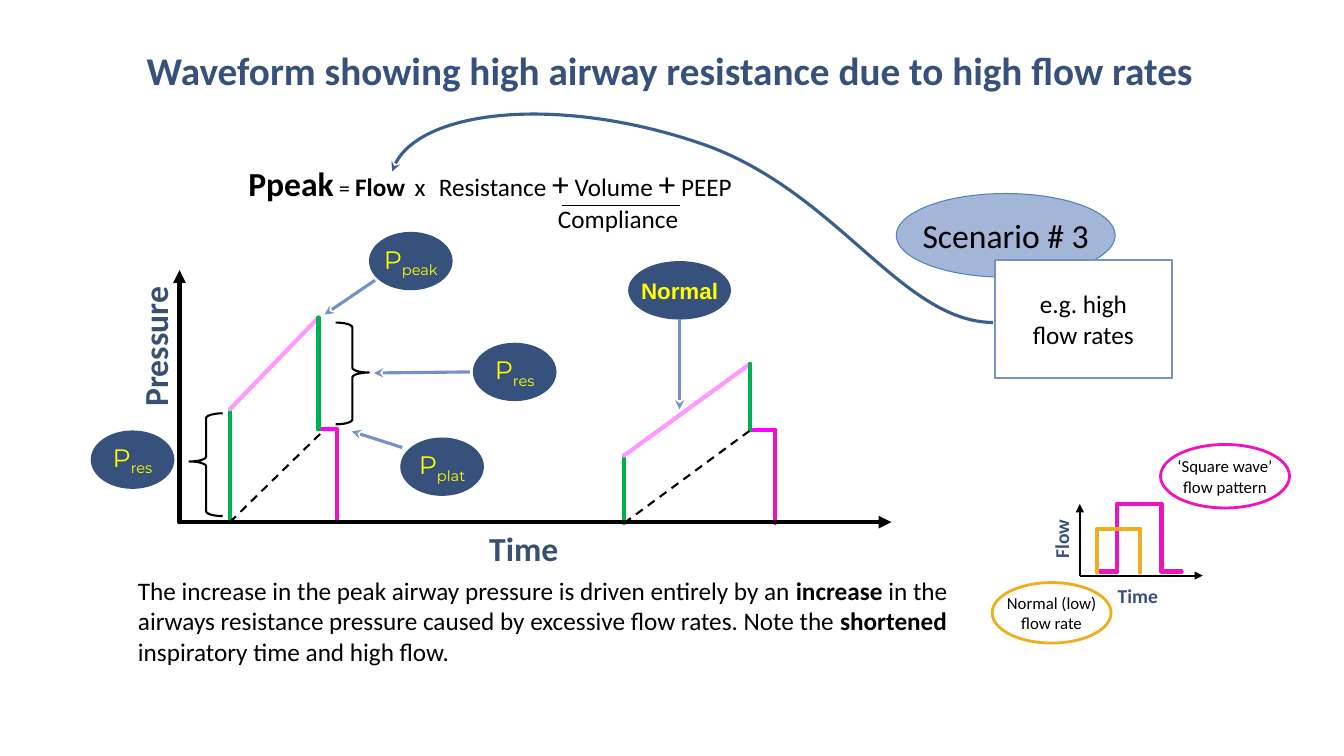
from dataclasses import dataclass
from itertools import pairwise
from typing import Optional

from lxml.etree import SubElement
from pptx import Presentation
from pptx.dml.color import RGBColor
from pptx.enum.dml import MSO_LINE_DASH_STYLE as DASH
from pptx.enum.shapes import MSO_CONNECTOR, MSO_SHAPE
from pptx.enum.text import MSO_ANCHOR, PP_ALIGN
from pptx.oxml.ns import qn
from pptx.util import Inches, Pt

BLACK = RGBColor(0x00, 0x00, 0x00)
WHITE = RGBColor(0xFF, 0xFF, 0xFF)
NAVY = RGBColor(0x37, 0x51, 0x7D)
AXIS_NAVY = RGBColor(0x38, 0x50, 0x72)
CURVE_BLUE = RGBColor(0x3A, 0x5F, 0x8C)
ARROW_BLUE = RGBColor(0x76, 0x92, 0xC2)
PALE_BLUE = RGBColor(0xA3, 0xB6, 0xD7)
EDGE_BLUE = RGBColor(0x4F, 0x81, 0xBD)
YELLOW = RGBColor(0xFF, 0xFF, 0x00)
GOLD = RGBColor(0xEF, 0xAE, 0x1E)
GREEN = RGBColor(0x00, 0xB0, 0x50)
PINK = RGBColor(0xFF, 0x99, 0xFF)
MAGENTA = RGBColor(0xED, 0x13, 0xBE)
FUCHSIA = RGBColor(0xFF, 0x00, 0xFF)

Point = tuple[float, float]
Box = tuple[float, float, float, float]


@dataclass
class Run:
    text: str
    size: float = 18
    bold: bool = False
    color: RGBColor = BLACK
    font: str = "Calibri"
    attrs: Optional[dict[str, str]] = None


@dataclass
class Line:
    color: RGBColor
    width: float
    dash: bool = False
    tail: str = ""


@dataclass
class Bubble:
    box: Box
    paras: list[list[Run]]
    fill: Optional[RGBColor] = None
    line: Optional[Line] = None
    kind: MSO_SHAPE = MSO_SHAPE.OVAL


@dataclass
class Breath:
    """Corners of one pressure waveform."""
    start: Point
    rise: Point
    peak: Point
    plateau: Point
    end: Point
    dash_end: Point


def style_line(line, look: Line, end: str = "a:tailEnd") -> None:
    line.color.rgb = look.color
    line.width = Pt(look.width)
    if look.width == 3:
        line._get_or_add_ln().set("cap", "rnd")
    if look.dash:
        line.dash_style = DASH.DASH
    if look.tail:
        SubElement(line._get_or_add_ln(), qn(end), type=look.tail)


def write(tf, paras: list[list[Run]], align=PP_ALIGN.CENTER,
          anchor=MSO_ANCHOR.MIDDLE, wrap: bool = False) -> None:
    tf.word_wrap, tf.vertical_anchor = wrap, anchor
    for i, runs in enumerate(paras):
        p = tf.paragraphs[0] if i == 0 else tf.add_paragraph()
        p.alignment = align
        for run in runs:
            r = p.add_run()
            r.text = run.text
            r.font.color.rgb = run.color
            look = {"name": run.font, "size": Pt(run.size), "bold": run.bold}
            for key, value in look.items():
                setattr(r.font, key, value)
            for key, value in (run.attrs or {}).items():
                r._r.get_or_add_rPr().set(key, value)


def add_text(slide, box: Box, paras: list[list[Run]], rotation: float = 0, **layout):
    sp = slide.shapes.add_textbox(*map(Inches, box))
    sp.rotation = rotation
    write(sp.text_frame, paras, **layout)
    return sp.text_frame


def add_line(slide, start: Point, end: Point, look: Line) -> None:
    cn = slide.shapes.add_connector(MSO_CONNECTOR.STRAIGHT, *map(Inches, start + end))
    style_line(cn.line, look)
    SubElement(cn._element.spPr, qn("a:effectLst"))


def add_polyline(slide, points: list[Point], look: Line) -> None:
    for start, end in pairwise(points):
        add_line(slide, start, end, look)


def add_bubble(slide, b: Bubble) -> None:
    sp = slide.shapes.add_shape(b.kind, *map(Inches, b.box))
    sp.shadow.inherit = False
    if b.fill is None:
        sp.fill.background()
    else:
        sp.fill.solid()
        sp.fill.fore_color.rgb = b.fill
    if b.line is None:
        sp.line.fill.background()
    else:
        style_line(sp.line, b.line)
    write(sp.text_frame, b.paras)


def add_brace(slide, box: Box, middle: float, flip: bool) -> None:
    sp = slide.shapes.add_shape(MSO_SHAPE.RIGHT_BRACE, *map(Inches, box))
    sp.shadow.inherit = False
    sp.fill.background()
    style_line(sp.line, Line(BLACK, 1.5))
    sp.adjustments[0], sp.adjustments[1] = 0.146, middle
    if flip:
        sp._element.spPr.find(qn("a:xfrm")).set("flipH", "1")


def add_curve(slide, points: list[Point], top: float, look: Line) -> None:
    """Draw Bezier segments: a start, then two controls and an end for each."""
    pts = [(Inches(x), Inches(y)) for x, y in points]
    fb = slide.shapes.build_freeform(*pts[0])
    fb.add_line_segments(pts[1:], close=False)
    sp = fb.convert_to_shape()
    sp.shadow.inherit = False
    sp.fill.background()
    style_line(sp.line, look, "a:headEnd")
    outline = next(sp._element.iter(qn("a:path")))
    steps = outline.findall(qn("a:lnTo"))
    for i in range(0, len(steps), 3):
        bezier = SubElement(outline, qn("a:cubicBezTo"))
        for step in steps[i:i + 3]:
            bezier.append(step[0])
            outline.remove(step)
    # The frame hugs the curve, leaving the control points outside it.
    shift = Inches(top) - sp.top
    sp.top, sp.height = Inches(top), sp.height - shift
    outline.set("h", str(sp.height))
    for pt in outline.iter(qn("a:pt")):
        pt.set("y", str(int(pt.get("y")) - shift))


def add_breath(slide, b: Breath) -> None:
    foot = (b.peak[0], b.plateau[1])
    for start, end, look in [
        (b.start, b.rise, Line(GREEN, 3)),
        (b.rise, b.peak, Line(PINK, 3)),
        (foot, b.plateau, Line(FUCHSIA, 3)),
        (b.plateau, b.end, Line(MAGENTA, 3)),
        (foot, b.peak, Line(GREEN, 3)),
        (b.start, b.dash_end, Line(BLACK, 1.5, dash=True)),
    ]:
        add_line(slide, start, end, look)


def pressure_bubble(left: float, top: float, sub: str) -> Bubble:
    runs = [Run(text, color=YELLOW, font="Montserrat", attrs=attrs)
            for text, attrs in (("P", None), (sub, {"baseline": "-25000"}))]
    return Bubble((left, top, 0.83, 0.58), [runs], NAVY)


def small_lines(*texts: str, size: float = 12) -> list[list[Run]]:
    return [[Run(text, size)] for text in texts]


BUBBLES = [
    Bubble((8.89, 1.92, 2.17, 0.83), small_lines("Scenario # 3", size=24), PALE_BLUE, Line(EDGE_BLUE, 0.75)),
    Bubble((9.87, 2.58, 1.75, 1.17), small_lines("e.g. high", "flow rates", size=18), WHITE,
           Line(ARROW_BLUE, 1.5), MSO_SHAPE.RECTANGLE),
    Bubble((11.51, 4.41, 1.28, 0.63), small_lines("‘Square wave’", "flow pattern"), line=Line(MAGENTA, 2)),
    Bubble((9.84, 5.78, 1.18, 0.6), small_lines("Normal (low)", "flow rate"), line=Line(GOLD, 2)),
    Bubble((6.23, 2.59, 1.02, 0.58), [[Run("Normal", 16, True, YELLOW, "Arial")]], NAVY),
    pressure_bubble(3.66, 2.3, "peak"),
    pressure_bubble(0.9, 4.27, "res"),
    pressure_bubble(3.97, 4.34, "plat"),
    pressure_bubble(4.69, 3.4, "res"),
]
POINTERS = [((3.72, 2.78), (3.22, 3.12)), ((3.99, 4.44), (3.49, 4.28)),
            ((4.66, 3.69), (3.71, 3.7)), ((6.74, 3.16), (6.74, 4.06))]
AXES = [((1.78, 5.18), (8.84, 5.18), 3), ((1.78, 5.18), (1.78, 2.68), 3),
        ((10.71, 5.71), (11.93, 5.71), 1.5), ((10.71, 5.71), (10.71, 5), 1.5)]
AXIS_LABELS = [("Pressure", (0.88, 3.24, 1.31, 0.4), 24, AXIS_NAVY, 270),
               ("Time", (4.57, 5.26, 1.25, 0.36), 24, AXIS_NAVY, 0),
               ("Flow", (10.27, 5.26, 0.51, 0.18), 14, NAVY, 270),
               ("Time", (11.06, 5.81, 0.45, 0.2), 14, NAVY, 0)]
BREATHS = [Breath((2.28, 5.18), (2.28, 4.06), (3.16, 3.15), (3.34, 4.26), (3.34, 5.18), (3.18, 4.3)),
           Breath((6.19, 5.19), (6.19, 4.52), (7.44, 3.61), (7.69, 4.27), (7.69, 5.19), (7.44, 4.27))]
HIGH_FLOW = [(10.91, 5.67), (11.08, 5.67), (11.08, 5), (11.52, 5), (11.52, 5.67), (11.72, 5.67)]
LOW_FLOW = [(10.88, 5.68), (10.88, 5.25), (11.31, 5.25), (11.31, 5.68)]
FORMULA = [[Run("Ppeak", 24, True), Run(" = ", 16), Run("Flow", bold=True), Run(" x ", attrs={"spc": "270"}),
            Run("Resistance "), Run("+", 24), Run(" Volume "), Run("+", 24), Run(" PEEP")],
           [Run("Compliance")]]
SUMMARY = [[Run("The increase in the peak airway pressure is driven entirely by an "), Run("increase", bold=True),
            Run(" in the airways resistance pressure caused by excessive flow rates. Note the "),
            Run("shortened", bold=True), Run(" inspiratory time and high flow.")]]


def main() -> None:
    prs = Presentation()
    prs.slide_width, prs.slide_height = Inches(13.33), Inches(7.5)
    slide = prs.slides.add_slide(prs.slide_layouts[6])
    title = add_text(slide, (0.89, 0.13, 11.5, 0.85),
                     [[Run("Waveform showing high airway resistance due to high flow rates", 28, True, NAVY)]],
                     anchor=MSO_ANCHOR.BOTTOM, wrap=True)
    title.paragraphs[0].line_spacing = 0.9
    formula = add_text(slide, (1.9, 1.51, 5.92, 0.92), FORMULA, wrap=True)
    formula.paragraphs[1]._p.get_or_add_pPr().set("marL", str(Inches(2.54)))
    add_line(slide, (5.57, 2.04), (6.74, 2.04), Line(BLACK, 1.25))
    for bubble in BUBBLES:
        add_bubble(slide, bubble)
    add_polyline(slide, HIGH_FLOW, Line(MAGENTA, 3))
    add_polyline(slide, LOW_FLOW, Line(GOLD, 3))
    for breath in BREATHS:
        add_breath(slide, breath)
    add_brace(slide, (1.88, 4.1, 0.33, 1.02), 0.469, flip=True)
    add_brace(slide, (3.33, 3.2, 0.33, 1.01), 0.491, flip=False)
    for start, end, width in AXES:
        add_line(slide, start, end, Line(BLACK, width, tail="triangle"))
    for start, end in POINTERS:
        add_line(slide, start, end, Line(ARROW_BLUE, 2.25, tail="stealth"))
    for text, box, size, color, rotation in AXIS_LABELS:
        tf = add_text(slide, box, [[Run(text, size, True, color)]], rotation)
        for side in ("left", "top", "right", "bottom"):
            setattr(tf, f"margin_{side}", 0)
    add_text(slide, (1.27, 5.66, 8.56, 1.01), SUMMARY, align=PP_ALIGN.LEFT, anchor=MSO_ANCHOR.TOP, wrap=True)
    add_curve(slide, [(3.89, 1.7), (4.07, 1.1), (5.53, 0.95), (6.91, 1.41), (8.29, 1.86), (8.92, 3.19), (9.85, 3.2)],
              1.14, Line(CURVE_BLUE, 2.25, tail="stealth"))
    prs.save("out.pptx")


if __name__ == "__main__":
    main()
